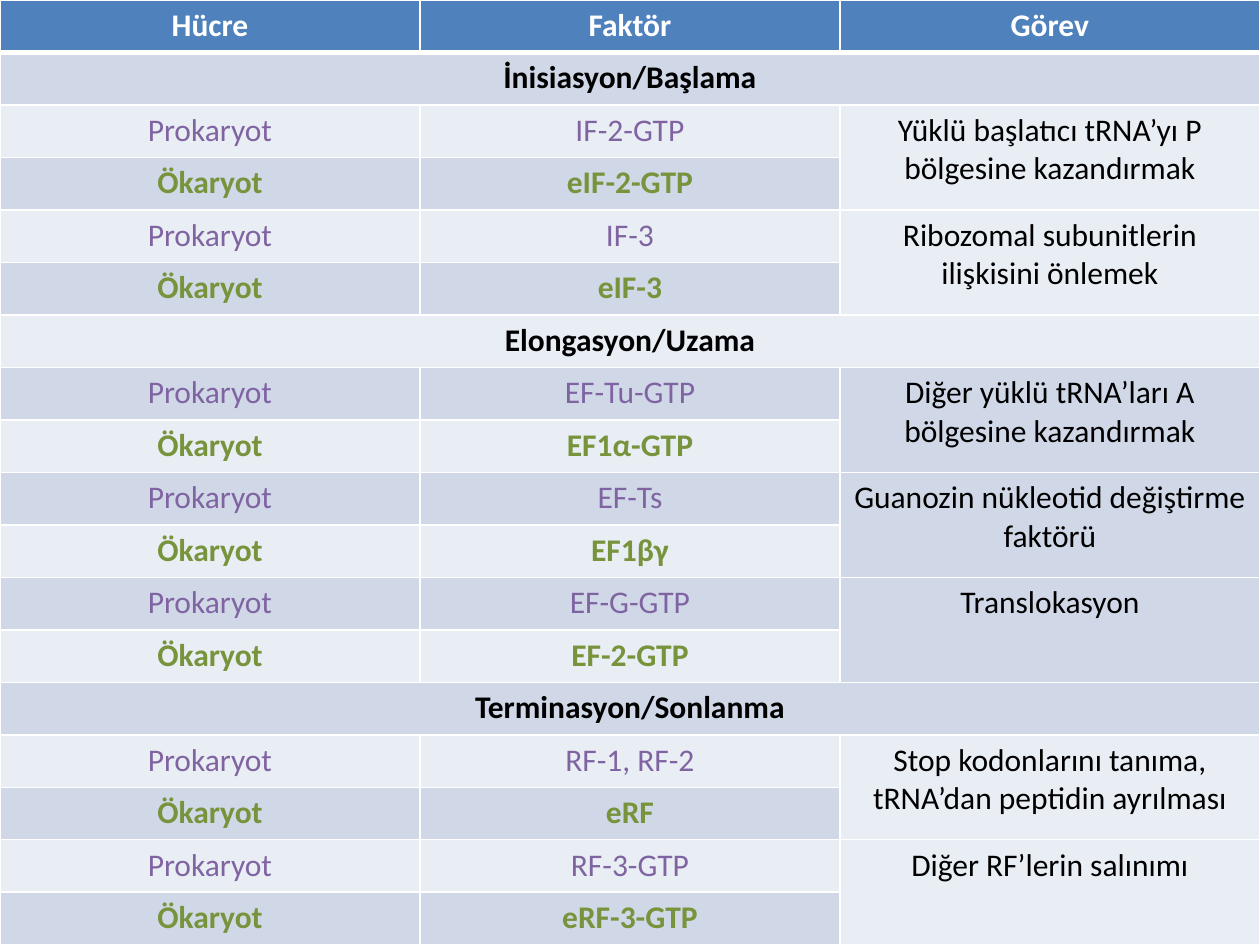
from dataclasses import dataclass

from lxml import etree
from pptx import Presentation, util as u
from pptx.dml.color import RGBColor
from pptx.enum import text
from pptx.oxml import ns


@dataclass(frozen=True)
class Theme:
    font: str = "Calibri"
    size: int = 18
    head: str = "4F81BD"
    dark: str = "D0D8E8"
    light: str = "E9EDF4"
    white: str = "FFFFFF"
    black: str = "000000"
    prok: str = "8064A2"
    euk: str = "77933C"
    thin: int = 1
    thick: int = 3


THEME = Theme()
WIDTH, HEIGHT = 10, 7.5
HEADS = ["Hücre", "Faktör", "Görev"]
STAGES = [
    ("İnisiasyon/Başlama", [
        ("IF-2-GTP", "eIF-2-GTP", "Yüklü başlatıcı tRNA’yı P bölgesine kazandırmak"),
        ("IF-3", "eIF-3", "Ribozomal subunitlerin ilişkisini önlemek"),
    ]),
    ("Elongasyon/Uzama", [
        ("EF-Tu-GTP", "EF1α-GTP", "Diğer yüklü tRNA’ları A bölgesine kazandırmak"),
        ("EF-Ts", "EF1βγ", "Guanozin nükleotid değiştirme faktörü"),
        ("EF-G-GTP", "EF-2-GTP", "Translokasyon"),
    ]),
    ("Terminasyon/Sonlanma", [
        ("RF-1, RF-2", "eRF", "Stop kodonlarını tanıma, tRNA’dan peptidin ayrılması"),
        ("RF-3-GTP", "eRF-3-GTP", "Diğer RF’lerin salınımı"),
    ]),
]


def write(cell, words, color=THEME.black, bold=False):
    para = cell.text_frame.paragraphs[0]
    para.alignment = text.PP_ALIGN.CENTER
    run = para.add_run()
    run.text = words
    font = run.font
    font.name, font.size, font.bold = THEME.font, u.Pt(THEME.size), bold
    font.color.rgb = RGBColor.from_string(color)


def border(cell, top, base):
    props = cell._tc.get_or_add_tcPr()
    sides = [("L", THEME.thin), ("R", THEME.thin), ("T", top), ("B", base)]
    for i, (side, width) in enumerate(sides):
        line = etree.Element(ns.qn(f"a:ln{side}"), w=str(u.Pt(width)))
        fill = etree.SubElement(line, ns.qn("a:solidFill"))
        etree.SubElement(fill, ns.qn("a:srgbClr"), val=THEME.white)
        props.insert(i, line)


def paint(table):
    for i, row in enumerate(table.rows):
        color = THEME.head if i == 0 else THEME.dark if i % 2 else THEME.light
        top = THEME.thick if i == 1 else THEME.thin
        base = THEME.thick if i == 0 else THEME.thin
        for cell in row.cells:
            cell.fill.solid()
            cell.fill.fore_color.rgb = RGBColor.from_string(color)
            border(cell, top, base)


def add_grid(slide):
    count = 1 + sum(1 + 2 * len(pairs) for _, pairs in STAGES)
    frame = slide.shapes.add_table(
        count, len(HEADS), 0, 0, u.Inches(WIDTH), u.Inches(HEIGHT))
    table = frame.table
    for col in table.columns:
        col.width = u.Inches(WIDTH / len(HEADS))
    for row in table.rows:
        row.height = u.Inches(HEIGHT / count)
    paint(table)
    return table


def add_stage(table, row, title, pairs):
    table.cell(row, 0).merge(table.cell(row, 2))
    write(table.cell(row, 0), title, bold=True)
    row += 1
    for prok, euk, task in pairs:
        for col, words in enumerate(["Prokaryot", prok]):
            write(table.cell(row, col), words, color=THEME.prok)
        for col, words in enumerate(["Ökaryot", euk]):
            write(table.cell(row + 1, col), words, color=THEME.euk, bold=True)
        table.cell(row, 2).merge(table.cell(row + 1, 2))
        write(table.cell(row, 2), task)
        row += 2
    return row


def main():
    deck = Presentation()
    deck.slide_width, deck.slide_height = u.Inches(WIDTH), u.Inches(HEIGHT)
    slide = deck.slides.add_slide(deck.slide_layouts[6])
    table = add_grid(slide)
    for col, words in enumerate(HEADS):
        write(table.cell(0, col), words, color=THEME.white, bold=True)
    row = 1
    for title, pairs in STAGES:
        row = add_stage(table, row, title, pairs)
    deck.save("out.pptx")


if __name__ == "__main__":
    main()
